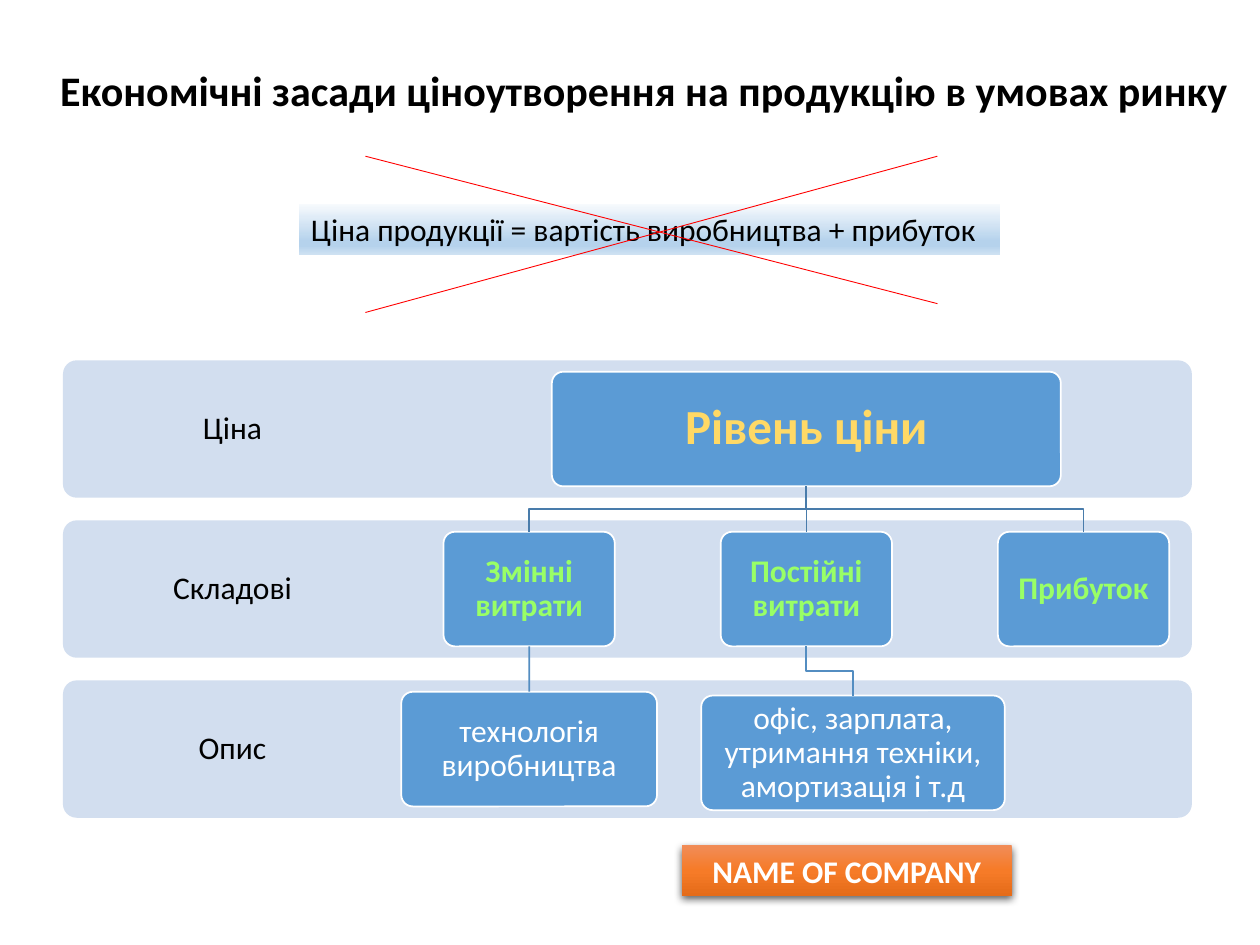
"""Build a slide on the economic basis of pricing in a market."""
from lxml import etree
from pptx import Presentation
from pptx.dml.color import RGBColor
from pptx.enum.shapes import MSO_CONNECTOR, MSO_SHAPE
from pptx.enum.text import MSO_ANCHOR, PP_ALIGN
from pptx.oxml.ns import qn
from pptx.util import Inches, Pt


def color(hex_string):
    return RGBColor.from_string(hex_string)


def write(shape, text, size=18, ink="000000", bold=False, align=PP_ALIGN.CENTER,
          inset=0.1, inset_y=0.1, spacing=0.9):
    frame = shape.text_frame
    frame.word_wrap = True
    frame.vertical_anchor = MSO_ANCHOR.MIDDLE
    frame.margin_left = frame.margin_right = Inches(inset)
    frame.margin_top = frame.margin_bottom = Inches(inset_y)
    paragraph = frame.paragraphs[0]
    paragraph.alignment = align
    paragraph.line_spacing = spacing
    run = paragraph.add_run()
    run.text = text
    run.font.name = "Calibri"
    run.font.size = Pt(size)
    run.font.bold = bold
    run.font.color.rgb = color(ink)


presentation = Presentation()
presentation.slide_width = Inches(10)
presentation.slide_height = Inches(7.5)
slide = presentation.slides.add_slide(presentation.slide_layouts[6])
shapes = slide.shapes

title = shapes.add_textbox(Inches(0.38), Inches(0.46), Inches(9.53), Inches(0.5))
write(title, "Економічні засади ціноутворення на продукцію в умовах ринку",
      size=24, bold=True, align=PP_ALIGN.LEFT, inset_y=0.05, spacing=1)

banners = [
    ("NAME OF COMPANY", 5.41, 6.71, 2.62, "FFFFFF", True, PP_ALIGN.CENTER,
     [(0, "F18C57"), (50, "F67B28"), (100, "E56C19")]),
    ("Ціна продукції = вартість виробництва + прибуток", 2.37, 1.62, 5.57,
     "000000", False, PP_ALIGN.LEFT,
     [(0, "F7FAFD"), (74, "B5D2EC"), (83, "B5D2EC"), (100, "CEE1F2")]),
]
for text, left, top, width, ink, bold, align, stops in banners:
    banner = shapes.add_shape(MSO_SHAPE.RECTANGLE, Inches(left), Inches(top),
                              Inches(width), Inches(0.4))
    banner.shadow.inherit = False
    banner.line.fill.background()
    banner.fill.gradient()
    banner.fill.gradient_angle = 270
    stop_list = banner.element.spPr.find(".//" + qn("a:gsLst"))
    for default_stop in list(stop_list):
        stop_list.remove(default_stop)
    for position, shade in stops:
        stop = etree.SubElement(stop_list, qn("a:gs"), pos=str(position * 1000))
        etree.SubElement(stop, qn("a:srgbClr"), val=shade)
    write(banner, text, ink=ink, bold=bold, align=align, inset_y=0.05, spacing=1)
    if bold:
        effects = banner.element.spPr.find(qn("a:effectLst"))
        shadow = etree.SubElement(effects, qn("a:outerShdw"), blurRad=str(Pt(4.5)),
                                  dist=str(Pt(1.5)), dir="5400000", rotWithShape="0")
        shade = etree.SubElement(shadow, qn("a:srgbClr"), val="000000")
        etree.SubElement(shade, qn("a:alpha"), val="63000")

for row, label in enumerate(["Ціна", "Складові", "Опис"]):
    top = Inches(2.86 + 1.27 * row)
    band = shapes.add_shape(MSO_SHAPE.ROUNDED_RECTANGLE, Inches(0.5), top,
                            Inches(8.96), Inches(1.09))
    band.adjustments[0] = 0.1
    band.shadow.inherit = False
    band.fill.solid()
    band.fill.fore_color.rgb = color("D2DEEF")
    band.line.fill.background()
    heading = shapes.add_textbox(Inches(0.5), top, Inches(2.69), Inches(1.09))
    write(heading, label, inset=0.14, inset_y=0.14)

box_height = 0.91
boxes = {
    "price": ("Рівень ціни", 6.4, 2.95, 4.04, 28, "FFD966", True),
    "variable": ("Змінні витрати", 4.2, 4.22, 1.36, 18, "99FF66", True),
    "fixed": ("Постійні витрати", 6.4, 4.22, 1.36, 18, "99FF66", True),
    "profit": ("Прибуток", 8.6, 4.22, 1.36, 18, "99FF66", True),
    "technology": ("технологія виробництва", 4.2, 5.49, 2.03, 18, "FFFFFF", False),
    "overheads": ("офіс, зарплата, утримання техніки, амортизація і т.д",
                  6.77, 5.52, 2.41, 18, "FFFFFF", False),
}
nodes = {}
for key, (text, center, top, width, size, ink, bold) in boxes.items():
    node = shapes.add_shape(MSO_SHAPE.ROUNDED_RECTANGLE, Inches(center - width / 2),
                            Inches(top), Inches(width), Inches(box_height))
    node.adjustments[0] = 0.1
    node.shadow.inherit = False
    node.fill.solid()
    node.fill.fore_color.rgb = color("5B9BD5")
    node.line.color.rgb = color("FFFFFF")
    node.line.width = Pt(1)
    write(node, text, size=size, ink=ink, bold=bold)
    nodes[key] = node

links = [("price", "variable", "497CAB"), ("price", "fixed", "497CAB"),
         ("price", "profit", "497CAB"), ("variable", "technology", "538DC1"),
         ("fixed", "overheads", "538DC1")]
for parent, child, shade in links:
    start_x, start_y = boxes[parent][1], boxes[parent][2] + box_height
    end_x, end_y = boxes[child][1:3]
    if start_x == end_x:
        link = shapes.add_connector(MSO_CONNECTOR.STRAIGHT, Inches(start_x),
                                    Inches(start_y), Inches(end_x), Inches(end_y))
        link.begin_connect(nodes[parent], 2)
        link.end_connect(nodes[child], 0)
        etree.SubElement(link.element.spPr, qn("a:effectLst"))
    else:
        bend_y = (start_y + end_y) / 2
        outline = shapes.build_freeform(Inches(start_x), Inches(start_y))
        outline.add_line_segments(
            [(Inches(x), Inches(y)) for x, y in
             [(start_x, bend_y), (end_x, bend_y), (end_x, end_y)]], close=False)
        link = outline.convert_to_shape()
        link.shadow.inherit = False
        link.fill.background()
    link.line.color.rgb = color(shade)
    link.line.width = Pt(1)

for start_y, end_y in [(1.24, 2.41), (2.48, 1.24)]:
    strike = shapes.add_connector(MSO_CONNECTOR.STRAIGHT, Inches(2.9), Inches(start_y),
                                  Inches(7.44), Inches(end_y))
    strike.line.color.rgb = color("FF0000")
    strike.line.width = Pt(0.5)
    etree.SubElement(strike.element.spPr, qn("a:effectLst"))

presentation.save("out.pptx")
